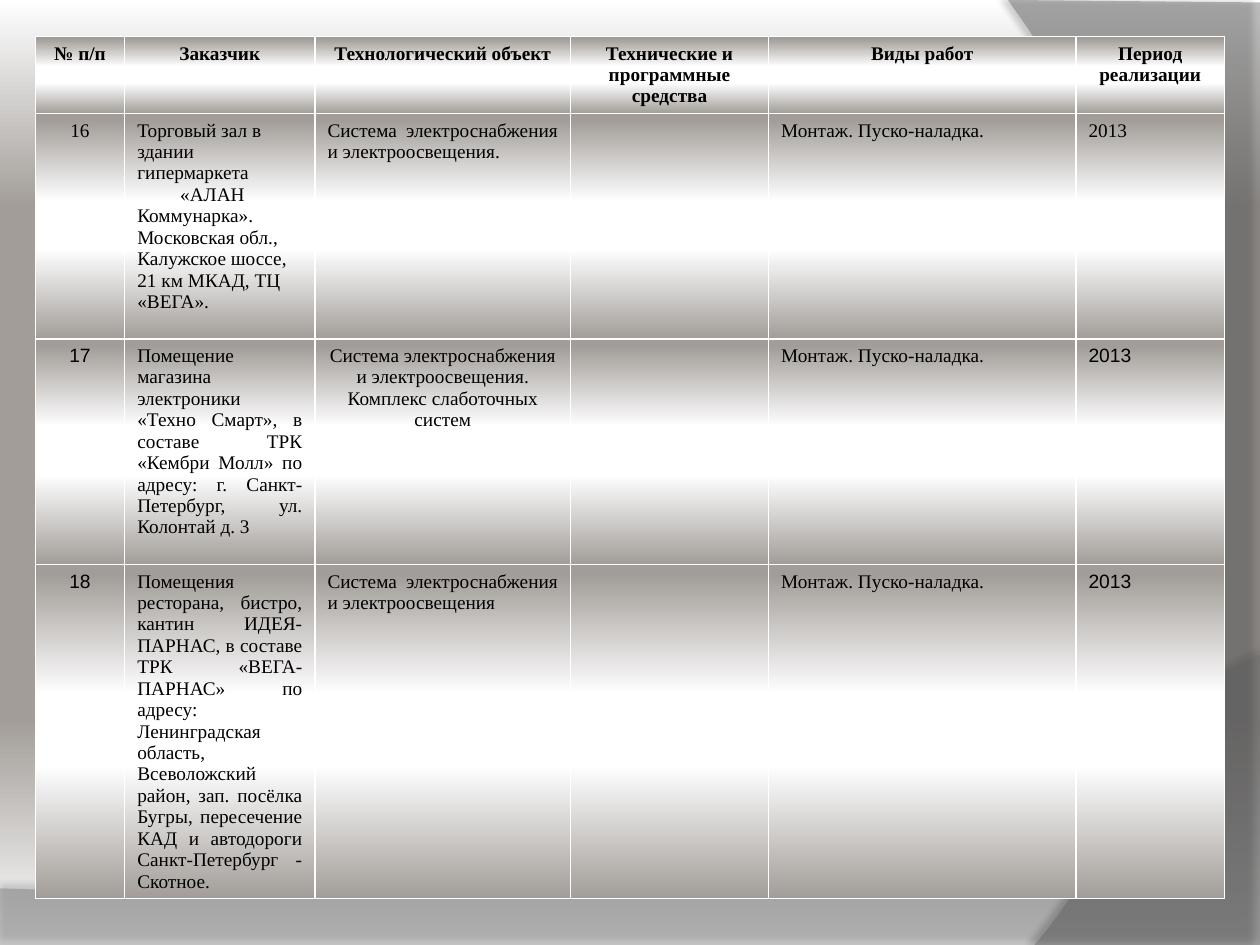
from lxml.etree import SubElement
from pptx import Presentation
from pptx.dml.color import RGBColor
from pptx.enum.text import PP_ALIGN
from pptx.oxml import parse_xml
from pptx.oxml.ns import nsdecls, qn
from pptx.util import Inches, Pt

BANDS = [(3, "A29D99"), (39, "FFFFFF"), (60, "FFFFFF"), (100, "A29D99")]
BACKDROP = [(0, "FFFFFF"), (22, "A29D99"), (76, "A29D99"), (100, "FFFFFF")]
LEFT, CENTER, JUSTIFY = PP_ALIGN.LEFT, PP_ALIGN.CENTER, PP_ALIGN.JUSTIFY


def color(hex_code):
    return RGBColor.from_string(hex_code)


def write(frame, text, align=LEFT, font="Times New Roman", size=11, bold=False, indents=()):
    """Put each line of text in its own paragraph; indents are first-line, in inches."""
    for number, line in enumerate(text.split("\n")):
        paragraph = frame.add_paragraph() if number else frame.paragraphs[0]
        paragraph.alignment = align
        if number < len(indents):
            paragraph._p.get_or_add_pPr().set("indent", str(Inches(indents[number])))
        run = paragraph.add_run()
        run.text = line
        run.font.name, run.font.size, run.font.bold = font, Pt(size), bold
        run.font.color.rgb = color("000000")


def curve(start, control_1, control_2, end, steps=40):
    """Points along a cubic curve, without its start."""
    points = []
    for step in range(1, steps + 1):
        t = step / steps
        weights = ((1 - t) ** 3, 3 * t * (1 - t) ** 2, 3 * t * t * (1 - t), t ** 3)
        corners = (start, control_1, control_2, end)
        points.append(tuple(sum(w * c[axis] for w, c in zip(weights, corners))
                            for axis in (0, 1)))
    return points


class ProjectSlide:
    def __init__(self, presentation):
        self.slide = presentation.slides.add_slide(presentation.slide_layouts[6])
        self.border_color, self.border_width = "FFFFFF", 1

    def gradient(self, fill, owner, stops):
        fill.gradient()
        fill.gradient_angle = 270
        stop_list = next(owner.iter(qn("a:gsLst")))
        for old in list(stop_list):
            stop_list.remove(old)
        for position, hex_code in stops:
            stop = SubElement(stop_list, qn("a:gs"), pos=str(position * 1000))
            SubElement(stop, qn("a:srgbClr"), val=hex_code)

    def background(self, stops):
        self.gradient(self.slide.background.fill, self.slide.element, stops)

    def wave(self, points, hex_code, opacity, shadow_opacity, distance, angle):
        outline = [(Inches(x), Inches(y)) for x, y in points]
        builder = self.slide.shapes.build_freeform(*outline[0])
        builder.add_line_segments(outline[1:], close=True)
        shape = builder.convert_to_shape()
        shape.fill.solid()
        shape.fill.fore_color.rgb = color(hex_code)
        fill_color = next(shape._element.spPr.iter(qn("a:srgbClr")))
        SubElement(fill_color, qn("a:alpha"), val=str(opacity * 1000))
        shape.line.fill.background()
        shape._element.spPr.append(parse_xml(
            f'<a:effectLst {nsdecls("a")}><a:outerShdw blurRad="{Pt(4)}" '
            f'dist="{Pt(distance)}" dir="{angle * 60000}" rotWithShape="0">'
            f'<a:srgbClr val="000000"><a:alpha val="{shadow_opacity * 1000}"/>'
            '</a:srgbClr></a:outerShdw></a:effectLst>'))

    def cell(self, cell, text, **style):
        properties = cell._tc.get_or_add_tcPr()
        self.gradient(cell.fill, properties, BANDS)
        for place, side in enumerate("LRTB"):
            properties.insert(place, parse_xml(
                f'<a:ln{side} {nsdecls("a")} w="{Pt(self.border_width)}"><a:solidFill>'
                f'<a:srgbClr val="{self.border_color}"/></a:solidFill></a:ln{side}>'))
        if text:
            write(cell.text_frame, text, **style)

    def table(self, left, top, widths, heights, rows):
        table = self.slide.shapes.add_table(
            len(heights), len(widths), Inches(left), Inches(top),
            Inches(sum(widths)), Inches(sum(heights))).table
        table.first_row = table.horz_banding = False
        for column, width in zip(table.columns, widths):
            column.width = Inches(width)
        for row, height, contents in zip(table.rows, heights, rows):
            row.height = Inches(height)
            for cell, (text, style) in zip(row.cells, contents):
                self.cell(cell, text, **style)


def project(number, customer, system, customer_style, system_align=JUSTIFY,
            number_font="Arial", year_align=JUSTIFY):
    return [
        (number, dict(align=CENTER, font=number_font)),
        (customer, customer_style),
        (system, dict(align=system_align)),
        ("", {}),
        ("Монтаж. Пуско-наладка.", dict(align=JUSTIFY)),
        ("2013", dict(align=year_align, font=number_font)),
    ]


def main():
    presentation = Presentation()
    presentation.slide_width, presentation.slide_height = Inches(10), Inches(7.5)
    page = ProjectSlide(presentation)

    # Backdrop with the two waves
    page.background(BACKDROP)
    page.wave([(0, 7.05), (0, 7.5), (10, 7.5), (10, 5.2)]
              + curve((10, 5.2), (5.59, 7.29), (3.91, 7.19), (0, 7.05)),
              "7F7F7F", 45, shadow_opacity=35, distance=3.5, angle=270)
    page.wave([(10, 0.02), (10, 7.5), (8.21, 7.5)]
              + curve((8.21, 7.5), (9.35, 6.19), (10.18, 3), (8, 0)),
              "5E5E5E", 40, shadow_opacity=45, distance=4, angle=180)

    # Table of projects
    titles = ["№ п/п", "Заказчик", "Технологический объект",
              "Технические и программные средства", "Виды работ", "Период реализации"]
    header = [(title, dict(align=CENTER, bold=True)) for title in titles]
    market = project(
        "16",
        "Торговый зал в здании гипермаркета\n«АЛАН Коммунарка».\n"
        "Московская обл., Калужское шоссе, 21 км МКАД, ТЦ «ВЕГА».",
        "Система электроснабжения и электроосвещения.",
        dict(indents=(0, 0.34)), number_font="Times New Roman", year_align=LEFT)
    electronics = project(
        "17",
        "Помещение магазина электроники «Техно Смарт», в составе ТРК «Кембри Молл» "
        "по адресу: г. Санкт-Петербург, ул. Колонтай д. 3",
        "Система электроснабжения и электроосвещения.\nКомплекс слаботочных систем",
        dict(align=JUSTIFY), system_align=CENTER)
    restaurant = project(
        "18",
        "Помещения ресторана, бистро, кантин ИДЕЯ-ПАРНАС, в составе ТРК «ВЕГА-ПАРНАС» "
        "по адресу: Ленинградская область, Всеволожский район, зап. посёлка Бугры, "
        "пересечение КАД и автодороги Санкт-Петербург - Скотное.",
        "Система электроснабжения и электроосвещения",
        dict(align=JUSTIFY))
    page.table(0.28, 0.29, [0.71, 1.51, 2.03, 1.57, 2.44, 1.18],
               [0.6, 1.79, 1.79, 2.65], [header, market, electronics, restaurant])

    presentation.save("out.pptx")


if __name__ == "__main__":
    main()
